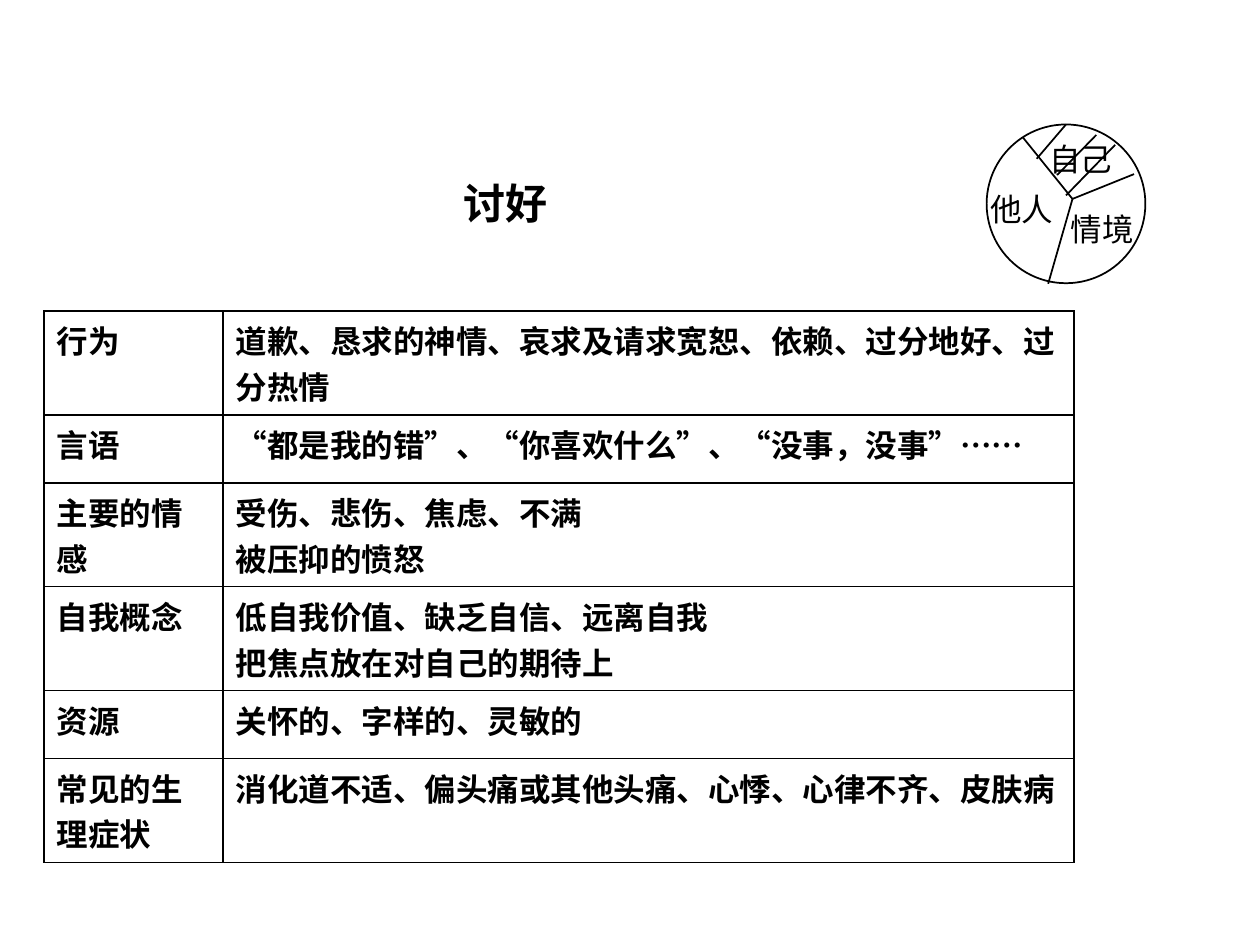
from dataclasses import dataclass
from typing import NamedTuple

from lxml.etree import SubElement
from pptx import Presentation
from pptx.dml.color import RGBColor
from pptx.enum.lang import MSO_LANGUAGE_ID
from pptx.enum.shapes import MSO_CONNECTOR, MSO_SHAPE
from pptx.enum.text import MSO_AUTO_SIZE
from pptx.oxml.ns import qn
from pptx.util import Cm, Pt


@dataclass(frozen=True)
class Theme:
    ink: str = "000000"
    cjk_font: str = "Noto Sans CJK SC"
    latin_font: str = "Arial"
    title_size: int = 24
    body_size: int = 18
    line_width: int = 1


class Label(NamedTuple):
    text: str
    left: float
    top: float


class Stroke(NamedTuple):
    x1: float
    y1: float
    x2: float
    y2: float


class Trait(NamedTuple):
    name: str
    details: tuple[str, ...]


THEME = Theme()
INK = RGBColor.from_string(THEME.ink)

TRAITS = [
    Trait("行为", ("道歉、恳求的神情、哀求及请求宽恕、依赖、过分地好、过分热情",)),
    Trait("言语", ("“都是我的错”、“你喜欢什么”、“没事，没事”……",)),
    Trait("主要的情感", ("受伤、悲伤、焦虑、不满", "被压抑的愤怒")),
    Trait("自我概念", ("低自我价值、缺乏自信、远离自我", "把焦点放在对自己的期待上")),
    Trait("资源", ("关怀的、字样的、灵敏的",)),
    Trait("常见的生理症状", ("消化道不适、偏头痛或其他头痛、心悸、心律不齐、皮肤病",)),
]
COLUMN_WIDTHS = (3.61, 17.15)
ROW_HEIGHT = 1.37

# Borders between the three sectors, then the hatching that crosses out the self
SECTOR_BORDERS = [
    Stroke(20.62, 2.77, 21.62, 4.01),
    Stroke(21.62, 4.01, 21.13, 5.72),
    Stroke(22.86, 3.51, 21.62, 4.01),
]
SELF_HATCHING = [
    Stroke(21.49, 2.51, 20.9, 3.2),
    Stroke(22.1, 2.72, 21.31, 3.53),
    Stroke(22.48, 2.92, 21.49, 3.94),
]
SECTOR_LABELS = [
    Label("自己", 20.9, 2.69),
    Label("他人", 19.71, 3.71),
    Label("情境", 21.34, 4.11),
]


def write_text(frame, *lines: str, size: int = THEME.body_size,
               bold: bool = False, font: str = THEME.cjk_font) -> None:
    for index, line in enumerate(lines):
        paragraph = frame.add_paragraph() if index else frame.paragraphs[0]
        run = paragraph.add_run()
        run.text = line
        run.font.size = Pt(size)
        run.font.bold = bold
        run.font.name = font
        run.font.color.rgb = INK
        run.font.language_id = MSO_LANGUAGE_ID.SIMPLIFIED_CHINESE
        east_asian = SubElement(run.font._element, qn("a:ea"))
        east_asian.set("typeface", THEME.cjk_font)


def add_label(shapes, label: Label, width: float, height: float, **style) -> None:
    box = shapes.add_textbox(Cm(label.left), Cm(label.top), Cm(width), Cm(height))
    box.text_frame.word_wrap = False
    box.text_frame.auto_size = MSO_AUTO_SIZE.SHAPE_TO_FIT_TEXT
    write_text(box.text_frame, label.text, **style)


def add_stroke(shapes, stroke: Stroke) -> None:
    line = shapes.add_connector(MSO_CONNECTOR.STRAIGHT, *(Cm(v) for v in stroke))
    line.line.color.rgb = INK
    line.line.width = Pt(THEME.line_width)
    SubElement(line._element.spPr, qn("a:effectLst"))


def border_cell(cell) -> None:
    properties = cell._tc.get_or_add_tcPr()
    for side in ("a:lnL", "a:lnR", "a:lnT", "a:lnB"):
        border = SubElement(properties, qn(side), w=str(Pt(THEME.line_width)))
        fill = SubElement(border, qn("a:solidFill"))
        SubElement(fill, qn("a:srgbClr"), val=THEME.ink)
    cell.fill.background()


def add_trait_table(shapes, left: float, top: float) -> None:
    table = shapes.add_table(
        len(TRAITS), len(COLUMN_WIDTHS), Cm(left), Cm(top),
        Cm(sum(COLUMN_WIDTHS)), Cm(ROW_HEIGHT * len(TRAITS))).table
    table.first_row = table.horz_banding = False
    for column, width in zip(table.columns, COLUMN_WIDTHS):
        column.width = Cm(width)
    for row, trait in zip(table.rows, TRAITS):
        row.height = Cm(ROW_HEIGHT)
        for cell, lines in zip(row.cells, ((trait.name,), trait.details)):
            border_cell(cell)
            write_text(cell.text_frame, *lines, bold=True)


def add_sector_circle(shapes, left: float, top: float, diameter: float) -> None:
    circle = shapes.add_shape(MSO_SHAPE.OVAL, Cm(left), Cm(top),
                              Cm(diameter), Cm(diameter))
    circle.shadow.inherit = False
    circle.fill.background()
    circle.line.color.rgb = INK
    circle.line.width = Pt(THEME.line_width)
    for border in SECTOR_BORDERS:
        add_stroke(shapes, border)
    for label in SECTOR_LABELS:
        add_label(shapes, label, 1.8, 1.02, font=THEME.latin_font)
    for hatch in SELF_HATCHING:
        add_stroke(shapes, hatch)


def main() -> None:
    deck = Presentation()
    deck.slide_width, deck.slide_height = Cm(25.4), Cm(19.05)
    slide = deck.slides.add_slide(deck.slide_layouts[6])

    # Table of traits
    add_trait_table(slide.shapes, 0.89, 6.27)

    # Title
    add_label(slide.shapes, Label("讨好", 9.09, 3.45), 2.24, 1.27,
              size=THEME.title_size, bold=True)

    # Circle of self, others and context
    add_sector_circle(slide.shapes.add_group_shape().shapes, 19.89, 2.51, 3.2)

    deck.save("out.pptx")


if __name__ == "__main__":
    main()
